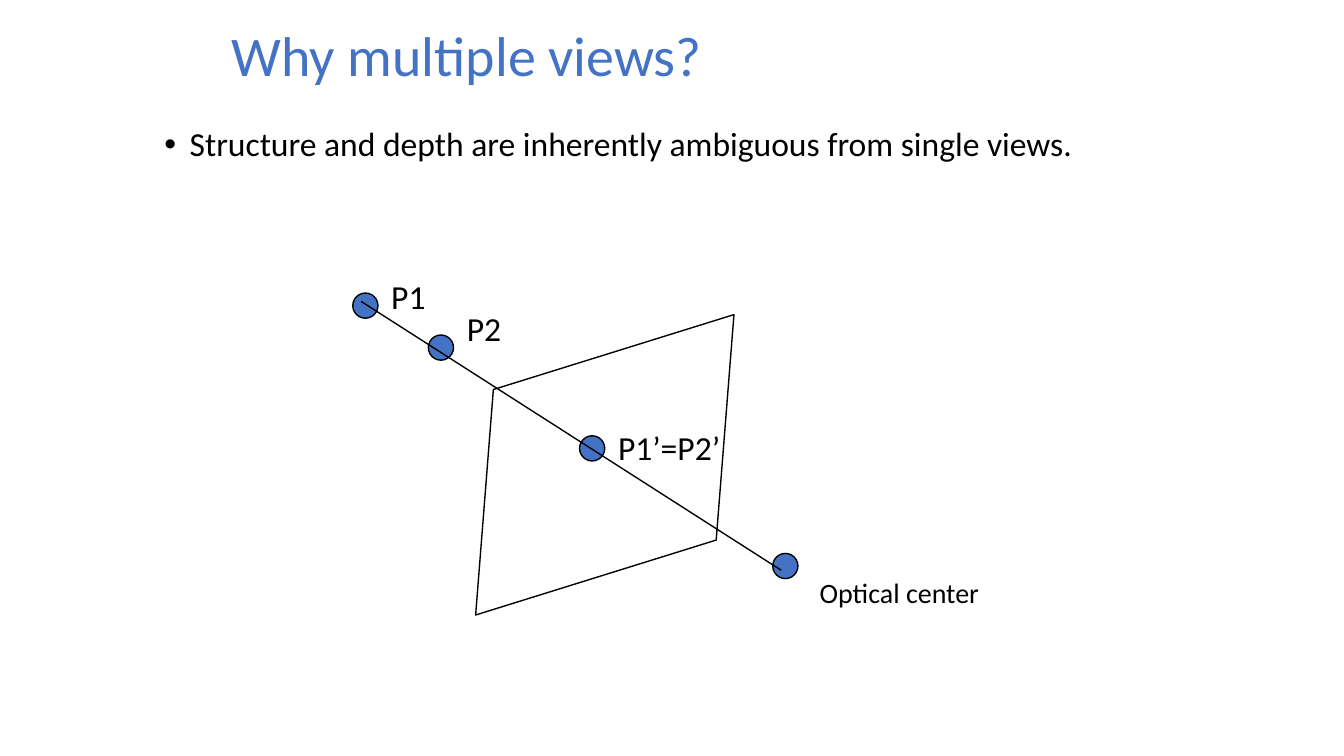
"""Build the slide that explains why multiple views are needed."""
import lxml.etree
import pptx
import pptx.dml.color
import pptx.enum.shapes
import pptx.enum.text
import pptx.oxml.ns
import pptx.util

Pt = pptx.util.Pt
BLUE = pptx.dml.color.RGBColor(0x44, 0x72, 0xC4)
BLACK = pptx.dml.color.RGBColor(0, 0, 0)
FONT = "Calibri"
POINT_SIZE = 13.5


def add_bullet(paragraph, indent):
    """Give a paragraph a round bullet with a hanging indent in points."""
    properties = paragraph._p.get_or_add_pPr()
    properties.set("marL", str(Pt(indent)))
    properties.set("indent", str(-Pt(indent)))
    for tag, name, value in (("a:buFont", "typeface", "Arial"), ("a:buChar", "char", "•")):
        element = lxml.etree.SubElement(properties, pptx.oxml.ns.qn(tag))
        element.set(name, value)


def write_text(shape, text, size=18, color=BLACK, line_spacing=1.0, bullet_indent=None,
               anchor=pptx.enum.text.MSO_ANCHOR.TOP):
    """Write one formatted, left-aligned paragraph into a shape."""
    frame = shape.text_frame
    frame.word_wrap = True
    frame.auto_size = pptx.enum.text.MSO_AUTO_SIZE.NONE
    frame.vertical_anchor = anchor
    frame.text = text
    paragraph = frame.paragraphs[0]
    paragraph.alignment = pptx.enum.text.PP_ALIGN.LEFT
    paragraph.line_spacing = line_spacing
    paragraph.space_before = Pt(0)
    if bullet_indent is not None:
        add_bullet(paragraph, bullet_indent)
    font = paragraph.runs[0].font
    font.name = FONT
    font.size = Pt(size)
    font.color.rgb = color


def add_title(slide, text, left, top, width, height):
    """Place and format the title placeholder."""
    title = slide.shapes.title
    title.left, title.top, title.width, title.height = map(Pt, (left, top, width, height))
    write_text(title, text, size=30, color=BLUE, line_spacing=0.9,
               anchor=pptx.enum.text.MSO_ANCHOR.MIDDLE)


def add_text(slide, text, left, top, width, height, **text_format):
    """Add a text box with one paragraph."""
    box = slide.shapes.add_textbox(*map(Pt, (left, top, width, height)))
    write_text(box, text, **text_format)


def add_outlined_shape(slide, kind, left, top, width, height, fill=None):
    """Add a preset shape with a thin black outline."""
    shape = slide.shapes.add_shape(kind, *map(Pt, (left, top, width, height)))
    shape.shadow.inherit = False
    shape.line.color.rgb = BLACK
    shape.line.width = Pt(0.75)
    if fill is None:
        shape.fill.background()
    else:
        shape.fill.solid()
        shape.fill.fore_color.rgb = fill
    return shape


def add_image_plane(slide, left, top, width, height):
    """Add the tilted parallelogram of the image plane."""
    plane = add_outlined_shape(slide, pptx.enum.shapes.MSO_SHAPE.PARALLELOGRAM,
                               left, top, width, height)
    plane.adjustments[0] = 0.4
    plane.rotation = 342.7


def add_point(slide, left, top):
    """Add a blue point of the viewing ray."""
    add_outlined_shape(slide, pptx.enum.shapes.MSO_SHAPE.OVAL, left, top,
                       POINT_SIZE, POINT_SIZE, fill=BLUE)


def add_ray(slide, start_x, start_y, end_x, end_y):
    """Add the straight viewing ray."""
    ray = slide.shapes.add_connector(pptx.enum.shapes.MSO_CONNECTOR.STRAIGHT,
                                     *map(Pt, (start_x, start_y, end_x, end_y)))
    ray.line.color.rgb = BLACK
    ray.line.width = Pt(0.75)
    lxml.etree.SubElement(ray._element.spPr, pptx.oxml.ns.qn("a:effectLst"))


def main():
    """Build and save the presentation."""
    presentation = pptx.Presentation()
    presentation.slide_width, presentation.slide_height = Pt(720), Pt(405)
    slide = presentation.slides.add_slide(presentation.slide_layouts[5])

    add_title(slide, "Why multiple views?", 117, -2.25, 486, 67.5)
    add_text(slide, "Structure and depth are inherently ambiguous from single views.",
             81, 64.8, 522, 267, line_spacing=0.9, bullet_indent=13.5)
    add_image_plane(slide, 234, 192.75, 180, 112.5)
    for left, top in ((189, 157), (229.5, 179.5), (414, 296.5), (310.5, 233.5)):
        add_point(slide, left, top)
    add_ray(slide, 193.5, 161.5, 418.5, 305.5)

    labels = (
        ("Optical center", 432, 304.75, 175.5, 25, 15),
        ("P1", 202.5, 144, 45, 29, 18),
        ("P2", 243, 161.5, 45, 29, 18),
        ("P1’=P2’", 324, 225.25, 76.5, 29, 18),
    )
    for text, left, top, width, height, size in labels:
        add_text(slide, text, left, top, width, height, size=size)

    presentation.save("out.pptx")


if __name__ == "__main__":
    main()
